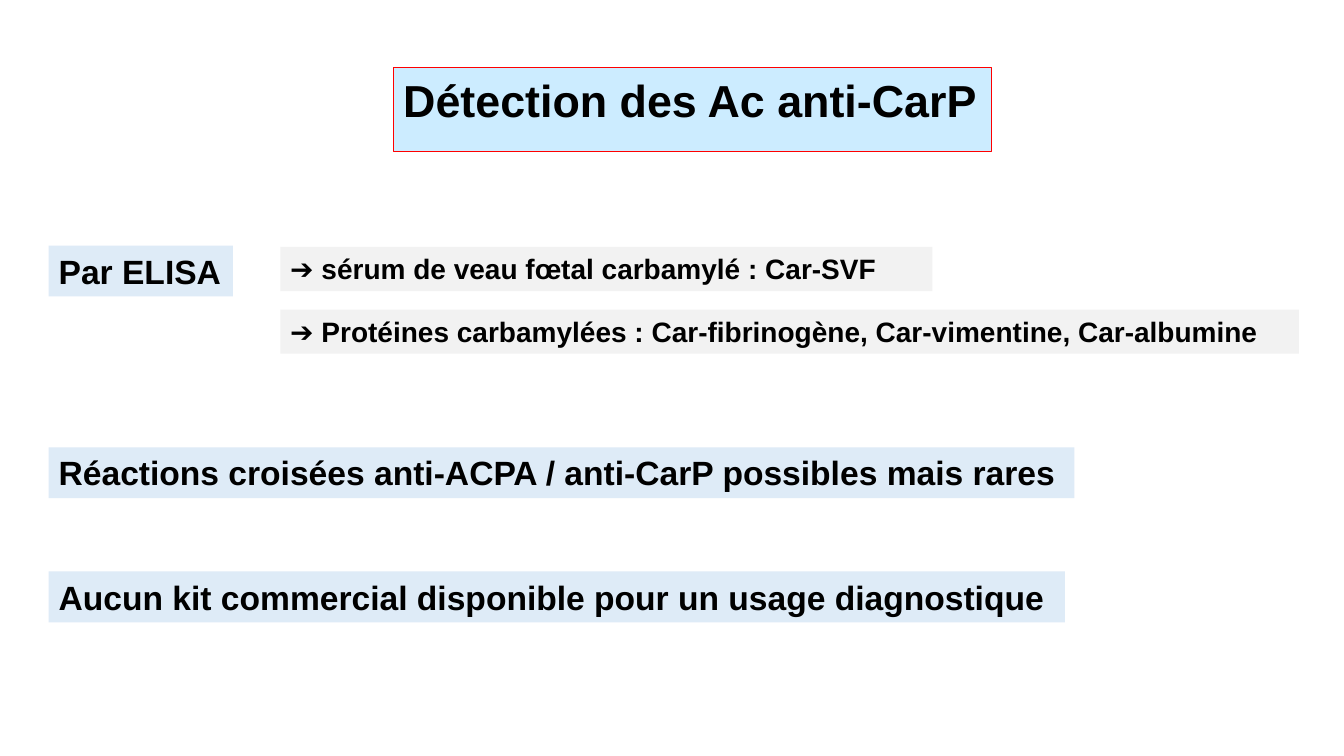
import dataclasses

import pptx
import pptx.dml.color
import pptx.enum.text
import pptx.util

Pt = pptx.util.Pt


@dataclasses.dataclass(frozen=True)
class Label:
    text: str
    left: float
    top: float
    width: float
    height: float
    size: float
    fill: str


MARGIN = 34.8
ARROW_LEFT = 200.2
BLUE = "DEEBF7"
GREY = "F2F2F2"

TITLE = Label("Détection des Ac anti-CarP", 280.8, 48.2, 427.7, 46.1, 32, "CCECFF")
LABELS = [
    Label("Par ELISA", MARGIN, 175.5, 131.6, 36.3, 24, BLUE),
    Label("➔ sérum de veau fœtal carbamylé : Car-SVF",
          ARROW_LEFT, 176.4, 465.8, 31.5, 20, GREY),
    Label("➔ Protéines carbamylées : Car-fibrinogène, Car-vimentine, Car-albumine",
          ARROW_LEFT, 221.2, 727.6, 31.5, 20, GREY),
    Label("Réactions croisées anti-ACPA / anti-CarP possibles mais rares",
          MARGIN, 319.5, 732.7, 36.3, 24, BLUE),
    Label("Aucun kit commercial disponible pour un usage diagnostique",
          MARGIN, 408.2, 725.8, 36.3, 24, BLUE),
]


def color(value: str) -> pptx.dml.color.RGBColor:
    return pptx.dml.color.RGBColor.from_string(value)


def format_label(sp, label: Label) -> None:
    sp.left, sp.top = Pt(label.left), Pt(label.top)
    sp.width, sp.height = Pt(label.width), Pt(label.height)
    sp.fill.solid()
    sp.fill.fore_color.rgb = color(label.fill)
    tf = sp.text_frame
    tf.text = label.text
    tf.word_wrap = True
    tf.auto_size = pptx.enum.text.MSO_AUTO_SIZE.SHAPE_TO_FIT_TEXT
    tf.vertical_anchor = pptx.enum.text.MSO_ANCHOR.TOP
    p = tf.paragraphs[0]
    p.alignment = pptx.enum.text.PP_ALIGN.LEFT
    p.font.name = "Arial"
    p.font.size = Pt(label.size)
    p.font.bold = True
    p.font.color.rgb = color("000000")


def add_label(slide, label: Label) -> None:
    sp = slide.shapes.add_textbox(
        Pt(label.left), Pt(label.top), Pt(label.width), Pt(label.height))
    format_label(sp, label)


def main() -> None:
    prs = pptx.Presentation()
    prs.slide_width, prs.slide_height = Pt(960), Pt(540)
    slide = prs.slides.add_slide(prs.slide_layouts[5])
    title = slide.shapes.title
    format_label(title, TITLE)
    title.line.color.rgb = color("FF0000")
    title.line.width = Pt(0.75)
    for label in LABELS:
        add_label(slide, label)
    prs.save("out.pptx")


if __name__ == "__main__":
    main()
